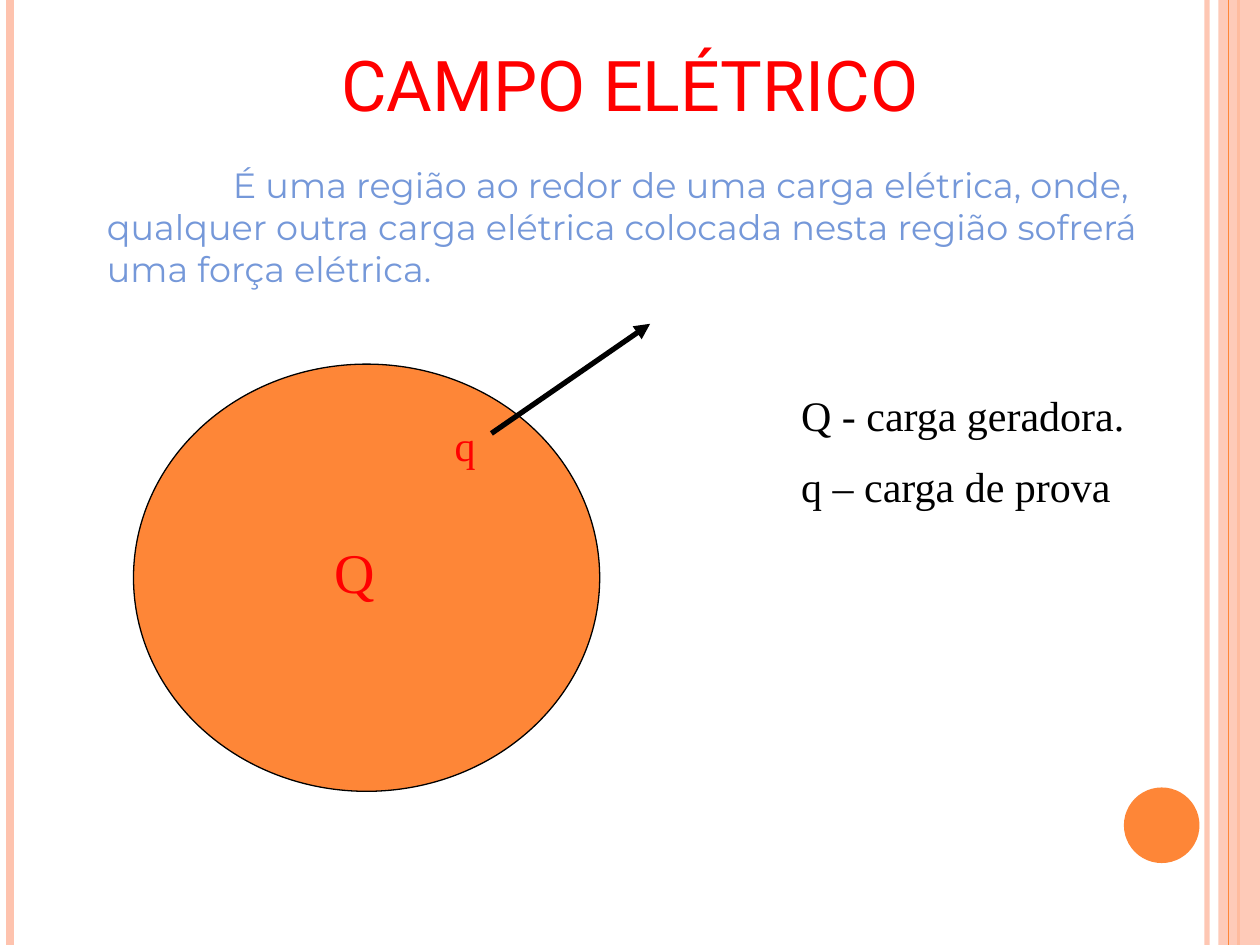
from dataclasses import dataclass

from lxml.etree import SubElement
from pptx import Presentation
from pptx.dml.color import RGBColor
from pptx.enum.shapes import MSO_CONNECTOR, MSO_SHAPE
from pptx.enum.text import MSO_ANCHOR, MSO_AUTO_SIZE, PP_ALIGN
from pptx.oxml.ns import qn
from pptx.util import Inches, Pt


@dataclass(frozen=True)
class Theme:
    orange: str = "FE8637"
    peach: str = "FEC3AE"
    blue: str = "7598D9"
    red: str = "FF0000"
    black: str = "000000"
    title_font: str = "Roboto"
    body_font: str = "Montserrat"
    label_font: str = "Times New Roman"
    title: int = 40
    charge: int = 32
    label: int = 24
    body: int = 20


class Sketch:
    columns, rows = 100, 75

    def __init__(self, deck, theme):
        self.theme = theme
        self.cell_width = deck.slide_width / self.columns
        self.cell_height = deck.slide_height / self.rows
        self.slide = deck.slides.add_slide(deck.slide_layouts[6])

    def place(self, column, row):
        return round(column * self.cell_width), round(row * self.cell_height)

    def paint(self, colour_format, colour, opacity=100):
        colour_format.solid()
        colour_format.fore_color.rgb = RGBColor.from_string(colour)
        if opacity < 100:
            tint = colour_format._xPr.find(qn("a:solidFill"))[0]
            SubElement(tint, qn("a:alpha"), val=str(opacity * 1000))

    def line(self, start, end, colour, weight, opacity=100, arrow=False):
        stroke = self.slide.shapes.add_connector(
            MSO_CONNECTOR.STRAIGHT, *self.place(*start), *self.place(*end))
        stroke.line.width = Pt(weight)
        self.paint(stroke.line.fill, colour, opacity)
        if arrow:
            SubElement(stroke.line._get_or_add_ln(), qn("a:tailEnd"), type="triangle")
        SubElement(stroke._element.spPr, qn("a:effectLst"))

    def stripe(self, column, colour, weight, opacity=100):
        self.line((column, 0), (column, self.rows), colour, weight, opacity)

    def shape(self, preset, corner, size, colour, opacity=100, outline=None):
        figure = self.slide.shapes.add_shape(
            preset, *self.place(*corner), *self.place(*size))
        figure.shadow.inherit = False
        self.paint(figure.fill, colour, opacity)
        if outline:
            self.paint(figure.line.fill, outline)
            figure.line.width = Pt(0.75)
        else:
            figure.line.fill.background()

    def text(self, corner, size, lines, font, points, colour,
             align=PP_ALIGN.LEFT, indent=0):
        frame = self.slide.shapes.add_textbox(
            *self.place(*corner), *self.place(*size)).text_frame
        layout = {"word_wrap": True, "vertical_anchor": MSO_ANCHOR.TOP,
                  "auto_size": MSO_AUTO_SIZE.SHAPE_TO_FIT_TEXT}
        for name, value in layout.items():
            setattr(frame, name, value)
        frame.text = "\n".join(lines)
        for paragraph in frame.paragraphs:
            paragraph.alignment = align
            properties = paragraph._p.get_or_add_pPr()
            properties.set("indent", str(self.place(indent, 0)[0]))
            gap = SubElement(properties, qn("a:spcBef"))
            SubElement(gap, qn("a:spcPct"), val="50000")
            letters = paragraph.runs[0].font
            for name, value in {"name": font, "size": Pt(points)}.items():
                setattr(letters, name, value)
            letters.color.rgb = RGBColor.from_string(colour)


def main():
    deck = Presentation()
    deck.slide_width, deck.slide_height = Inches(10), Inches(7.5)
    theme = Theme()
    field = Sketch(deck, theme)

    field.stripe(95.8, theme.peach, 3, opacity=93)
    field.stripe(0.8, theme.peach, 4.5)
    field.stripe(98.3, theme.orange, 1.5)
    field.shape(MSO_SHAPE.RECTANGLE, (96.7, 0), (3.3, 75), theme.peach, opacity=87)
    field.stripe(97.5, theme.orange, 0.75)
    field.shape(MSO_SHAPE.OVAL, (89.2, 62.5), (6, 6), theme.orange)

    field.text((10.6, 2.8), (78.8, 7.7), ["CAMPO ELÉTRICO"],
               theme.title_font, theme.title, theme.red, align=PP_ALIGN.CENTER)
    definition = ("É uma região ao redor de uma carga elétrica, onde, qualquer outra "
                  "carga elétrica colocada nesta região sofrerá uma força elétrica.")
    field.text((7.5, 12.5), (87.4, 11), [definition],
               theme.body_font, theme.body, theme.blue, indent=10)

    field.shape(MSO_SHAPE.OVAL, (10.6, 28.9), (37, 33.9), theme.orange,
                outline=theme.black)
    field.text((25.6, 42.2), (4.7, 6.3), ["Q"],
               theme.label_font, theme.charge, theme.red)
    field.text((35.1, 32.8), (5.5, 5), ["q"],
               theme.label_font, theme.label, theme.red)
    field.line((39, 34.4), (51.6, 25.7), theme.black, 3, arrow=True)
    field.text((62.6, 30.4), (35.8, 8.5), ["Q - carga geradora.", "q – carga de prova"],
               theme.label_font, theme.label, theme.black)

    deck.save("out.pptx")


if __name__ == "__main__":
    main()
